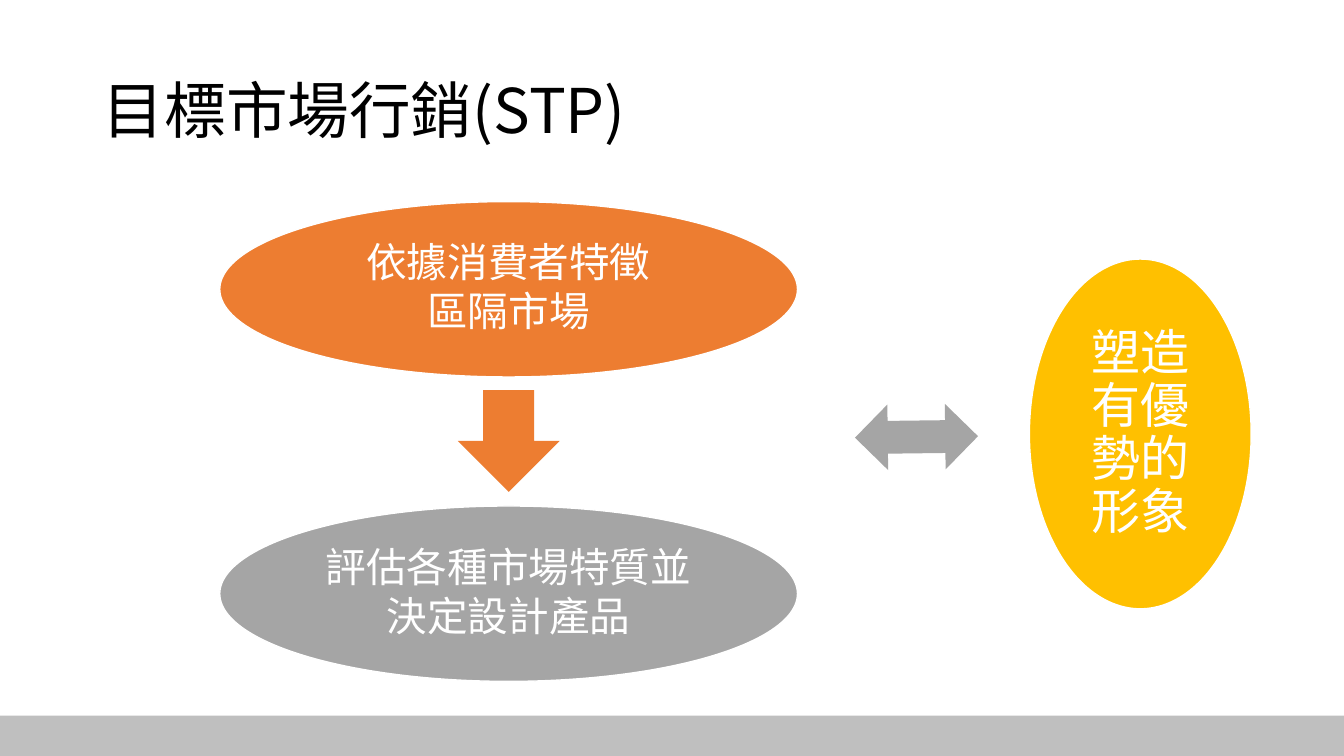
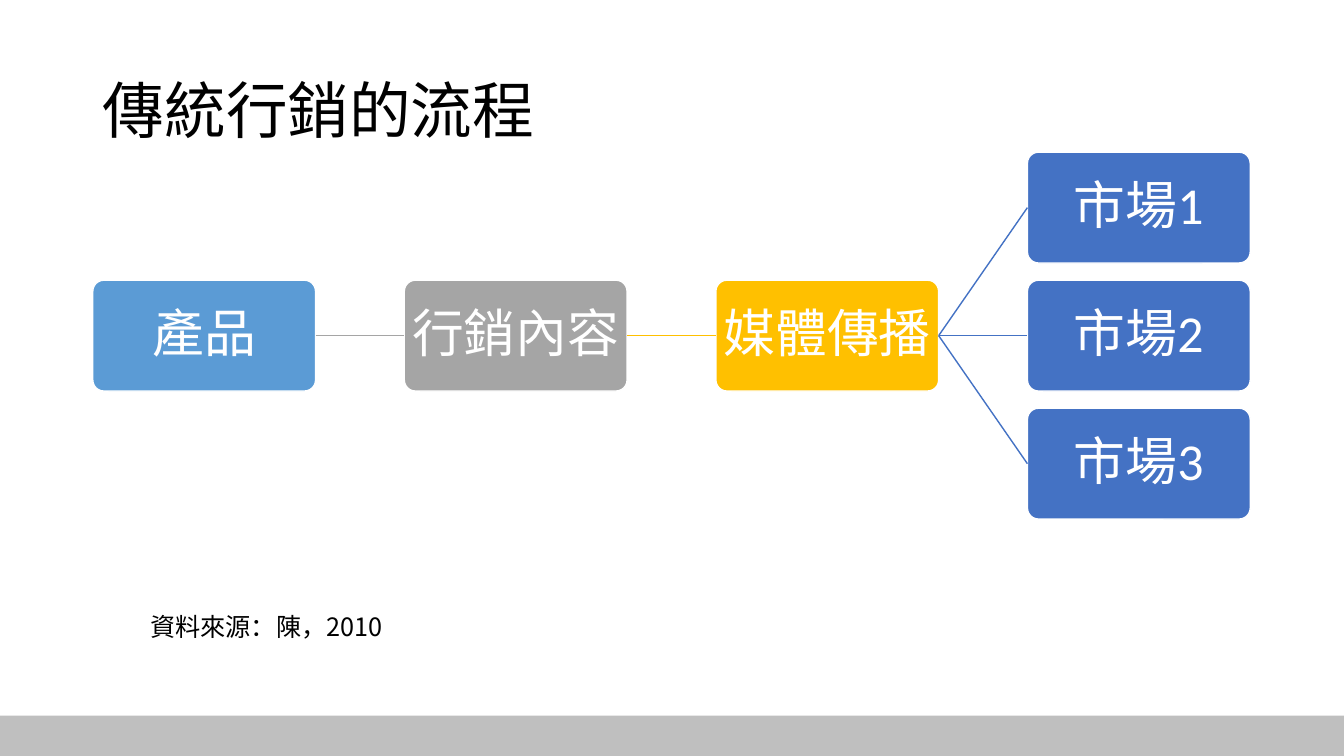
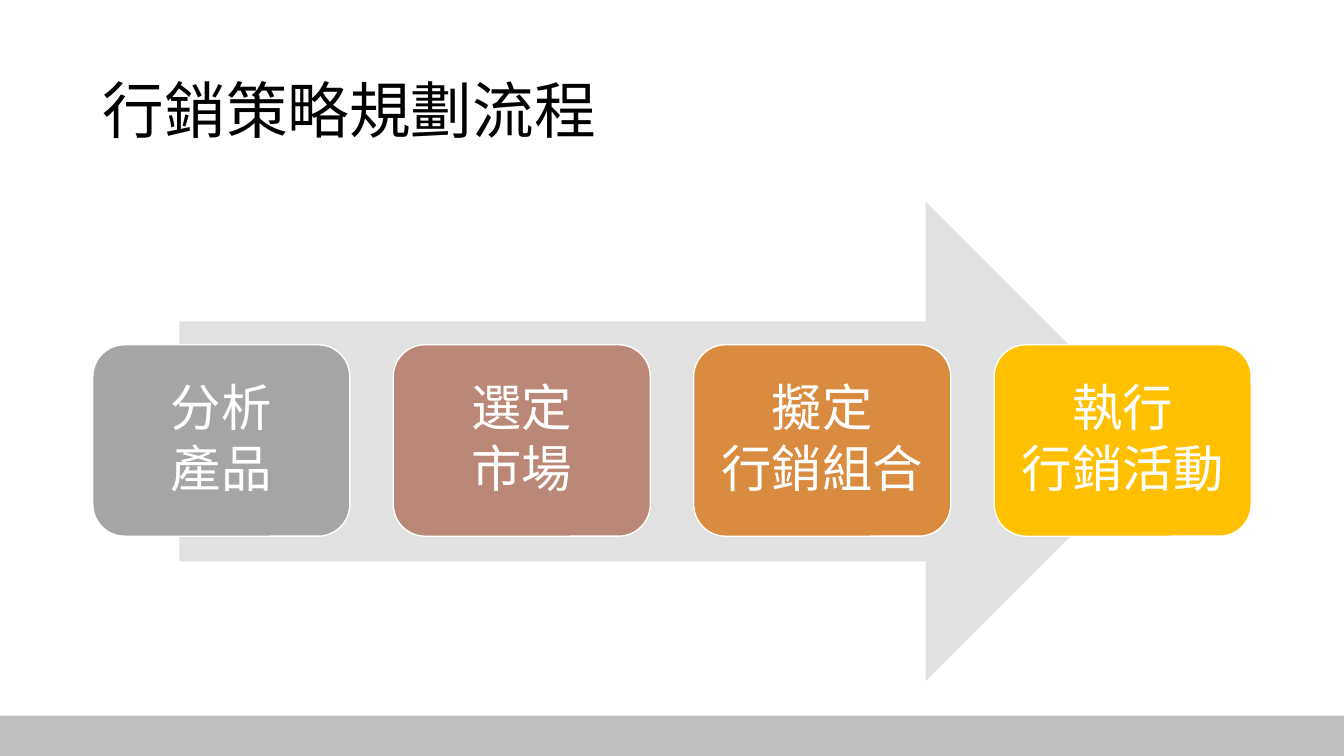
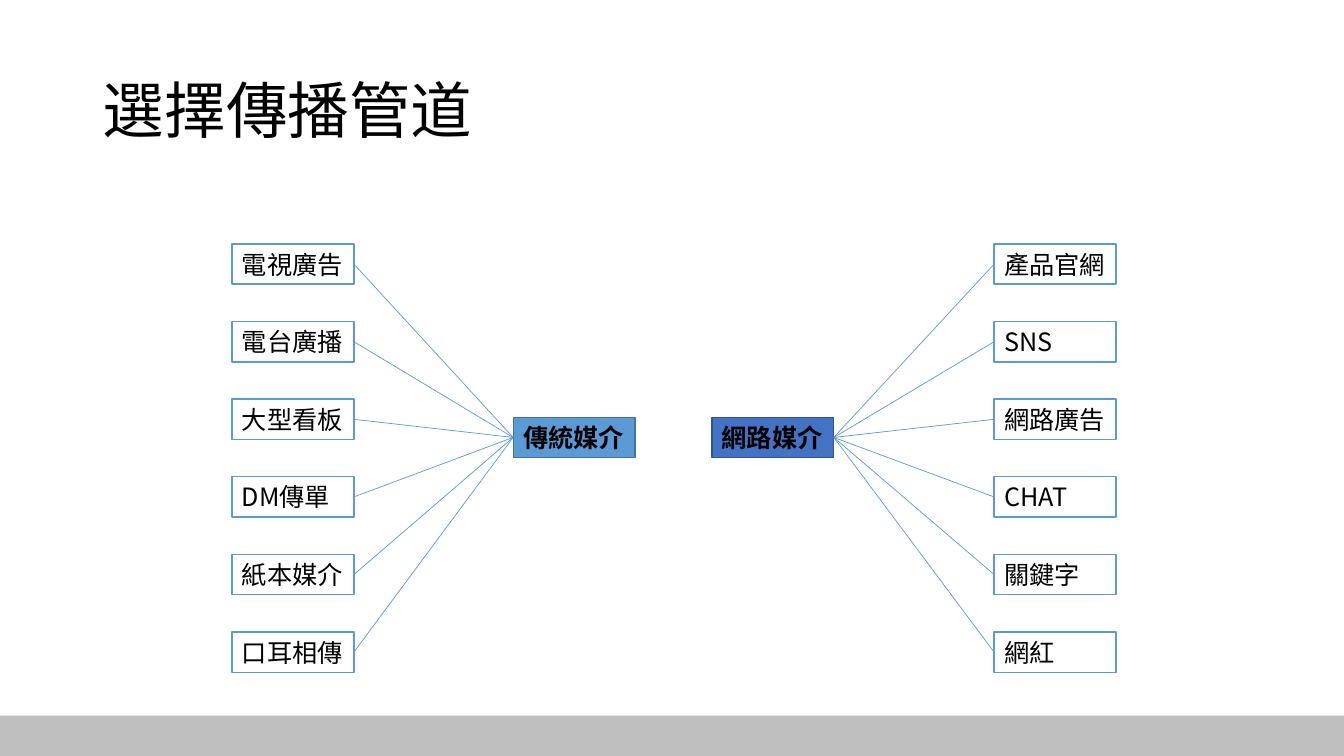
"""Build four slides on target marketing, its process and its media channels."""
from dataclasses import dataclass

from lxml import etree
from pptx import Presentation
from pptx import util as u
from pptx.dml.color import RGBColor
from pptx.enum import shapes, text
from pptx.oxml import ns

Inches = u.Inches
SHAPE = shapes.MSO_SHAPE
ALIGN = text.PP_ALIGN
ANCHOR = text.MSO_ANCHOR


@dataclass(frozen=True)
class Theme:
    """Colours, fonts and type sizes shared by all slides."""
    white: str = "FFFFFF"
    black: str = "000000"
    band: str = "BFBFBF"
    pale: str = "E1E1E1"
    orange: str = "ED7D31"
    gray: str = "A5A5A5"
    gold: str = "FFC000"
    rose: str = "BB8776"
    amber: str = "D98B3F"
    sky: str = "5B9BD5"
    sky_edge: str = "43739E"
    blue: str = "4472C4"
    blue_edge: str = "325491"
    latin: str = "Calibri"
    cjk: str = "Noto Sans CJK TC"
    title: int = 44
    node: int = 37
    step: int = 36
    image: int = 35
    stage: int = 29
    body: int = 18


THEME = Theme()


@dataclass(frozen=True)
class Area:
    """A rectangle in inches."""
    left: float
    top: float
    width: float
    height: float

    def lengths(self) -> tuple:
        """Return the four sides as lengths."""
        return tuple(Inches(side) for side in (self.left, self.top, self.width, self.height))


@dataclass(frozen=True)
class Label:
    """A filled shape with centred white text."""
    words: str
    area: Area
    fill: str
    kind: SHAPE
    size: int
    inset: float
    corner: float | None = None


@dataclass(frozen=True)
class Channel:
    """A medium with its branches on one side."""
    name: str
    left: float
    fill: str
    edge: str
    branches: tuple[str, ...]
    branch_left: float
    hub_site: int
    branch_site: int


def put_text(frame, words: str, *, size: int, color: str = THEME.black,
             font: str = THEME.cjk, bold: bool = False, align=ALIGN.LEFT,
             anchor=ANCHOR.TOP, inset: float | None = None,
             line: float = 1.0, after: float = 0) -> None:
    """Fill a text frame, one paragraph per line of words."""
    frame.word_wrap = True
    frame.auto_size = text.MSO_AUTO_SIZE.NONE
    frame.vertical_anchor = anchor
    if inset is not None:
        frame.margin_left = frame.margin_right = Inches(inset)
        frame.margin_top = frame.margin_bottom = Inches(inset)
    for index, row in enumerate(words.split("\n")):
        para = frame.add_paragraph() if index else frame.paragraphs[0]
        para.alignment = align
        para.line_spacing = line
        para.space_before = u.Pt(0)
        para.space_after = u.Pt(after)
        span = para.add_run()
        span.text = row
        span.font.size = u.Pt(size)
        span.font.bold = bold
        span.font.color.rgb = RGBColor.from_string(color)
        span.font.name = font
        east = etree.SubElement(span._r.get_or_add_rPr(), ns.qn("a:ea"))
        east.set("typeface", THEME.cjk)


def add_box(page, kind: SHAPE, area: Area, fill: str, edge: str | None = None):
    """Draw a flat preset shape, outlined if an edge colour is given."""
    box = page.shapes.add_shape(kind, *area.lengths())
    box.shadow.inherit = False
    box.fill.solid()
    box.fill.fore_color.rgb = RGBColor.from_string(fill)
    if edge:
        box.line.color.rgb = RGBColor.from_string(edge)
        box.line.width = u.Pt(1)
    else:
        box.line.fill.background()
    return box


def add_label(page, label: Label):
    """Draw a label shape and its text."""
    box = add_box(page, label.kind, label.area, label.fill, THEME.white)
    if label.corner is not None:
        box.adjustments[0] = label.corner
    put_text(box.text_frame, label.words, size=label.size, color=THEME.white,
             font=THEME.latin, align=ALIGN.CENTER, anchor=ANCHOR.MIDDLE,
             inset=label.inset, line=0.9, after=round(label.size / 8, 1))
    return box


def join(page, start, start_site: int, end, end_site: int, color: str, width: float) -> None:
    """Connect two boxes with a straight line."""
    line = page.shapes.add_connector(shapes.MSO_CONNECTOR.STRAIGHT, 0, 0, 0, 0)
    line.begin_connect(start, start_site)
    line.end_connect(end, end_site)
    line.line.color.rgb = RGBColor.from_string(color)
    line.line.width = u.Pt(width)
    etree.SubElement(line.element.spPr, ns.qn("a:effectLst"))


def add_page(deck, title: str):
    """Add a title-only slide with the shared title style."""
    page = deck.slides.add_slide(deck.slide_layouts[5])
    holder = page.shapes.title
    holder.left, holder.top, holder.width, holder.height = Area(0.92, 0.4, 11.5, 1.45).lengths()
    put_text(holder.text_frame, title, size=THEME.title, anchor=ANCHOR.MIDDLE, line=0.9)
    return page


def add_band(deck, page) -> None:
    """Draw the bottom band and hand it to the shared layout."""
    band = add_box(page, SHAPE.RECTANGLE, Area(0, 7.1, 13.33, 0.4), THEME.band)
    deck.slide_layouts[5].element.cSld.spTree.append(band.element)


def draw_targeting(page) -> None:
    """Draw the segment, evaluate and position diagram."""
    stages = (("依據消費者特徵\n區隔市場", 2, THEME.orange),
              ("評估各種市場特質並\n決定設計產品", 5.02, THEME.gray))
    for words, top, fill in stages:
        add_label(page, Label(words, Area(2.18, top, 5.73, 1.74), fill,
                              SHAPE.OVAL, THEME.stage, 0.04))
    add_box(page, SHAPE.DOWN_ARROW, Area(4.54, 3.87, 1.01, 1.01), THEME.orange)
    exchange = add_box(page, SHAPE.LEFT_RIGHT_ARROW, Area(8.48, 4.01, 1.22, 0.65), THEME.gray)
    exchange.rotation = 359.3
    add_label(page, Label("塑造有優勢的形象", Area(10.21, 2.57, 2.2, 3.47), THEME.gold,
                          SHAPE.OVAL, THEME.image, 0.05))


def draw_tradition(page) -> None:
    """Draw the chain from product to three markets."""
    def node(words: str, column: int, row: int, fill: str):
        """Place one node on the grid."""
        area = Area(0.92 + 3.09 * column, 2.78 + 1.27 * row, 2.21, 1.1)
        return add_label(page, Label(words, area, fill, SHAPE.ROUNDED_RECTANGLE,
                                     THEME.node, 0.03, 0.1))

    product = node("產品", 0, 0, THEME.sky)
    content = node("行銷內容", 1, 0, THEME.gray)
    media = node("媒體傳播", 2, 0, THEME.gold)
    join(page, product, 3, content, 1, THEME.gray, 1)
    join(page, content, 3, media, 1, THEME.gold, 1)
    for number, row in enumerate((-1, 0, 1), start=1):
        market = node(f"市場{number}", 3, row, THEME.blue)
        join(page, media, 3, market, 1, THEME.blue, 1)
    source = page.shapes.add_textbox(*Area(1.39, 6.02, 2.53, 0.4).lengths())
    put_text(source.text_frame, "資料來源：陳，2010", size=THEME.body)


def draw_planning(page) -> None:
    """Draw four planning steps over a wide arrow."""
    add_box(page, SHAPE.RIGHT_ARROW, Area(1.78, 2, 9.78, 4.76), THEME.pale)
    steps = (("分析\n產品", THEME.gray), ("選定\n市場", THEME.rose),
             ("擬定\n行銷組合", THEME.amber), ("執行\n行銷活動", THEME.gold))
    for index, (words, fill) in enumerate(steps):
        add_label(page, Label(words, Area(0.92 + 2.98 * index, 3.42, 2.55, 1.9), fill,
                              SHAPE.ROUNDED_RECTANGLE, THEME.step, 0.15))


def draw_channels(page) -> None:
    """Draw the two media hubs and their branches."""
    channels = (
        Channel("傳統媒介", 5.09, THEME.sky, THEME.sky_edge,
                ("電視廣告", "電台廣播", "大型看板", "DM傳單", "紙本媒介", "口耳相傳"), 2.3, 1, 3),
        Channel("網路媒介", 7.06, THEME.blue, THEME.blue_edge,
                ("產品官網", "SNS", "網路廣告", "CHAT", "關鍵字", "網紅"), 9.86, 3, 1),
    )
    for channel in channels:
        hub = add_box(page, SHAPE.RECTANGLE, Area(channel.left, 4.14, 1.21, 0.4),
                      channel.fill, channel.edge)
        put_text(hub.text_frame, channel.name, size=THEME.body, bold=True)
        for index, words in enumerate(channel.branches):
            area = Area(channel.branch_left, 2.42 + 0.77 * index, 1.21, 0.4)
            branch = add_box(page, SHAPE.RECTANGLE, area, THEME.white, THEME.sky)
            put_text(branch.text_frame, words, size=THEME.body)
            join(page, hub, channel.hub_site, branch, channel.branch_site, THEME.sky, 0.5)


def main() -> None:
    """Build and save the deck."""
    deck = Presentation()
    deck.slide_width, deck.slide_height = Inches(13.33), Inches(7.5)
    pages = (("目標市場行銷(STP)", draw_targeting), ("傳統行銷的流程", draw_tradition),
             ("行銷策略規劃流程", draw_planning), ("選擇傳播管道", draw_channels))
    for title, draw in pages:
        draw(add_page(deck, title))
    add_band(deck, deck.slides[0])
    deck.save("out.pptx")


if __name__ == "__main__":
    main()
